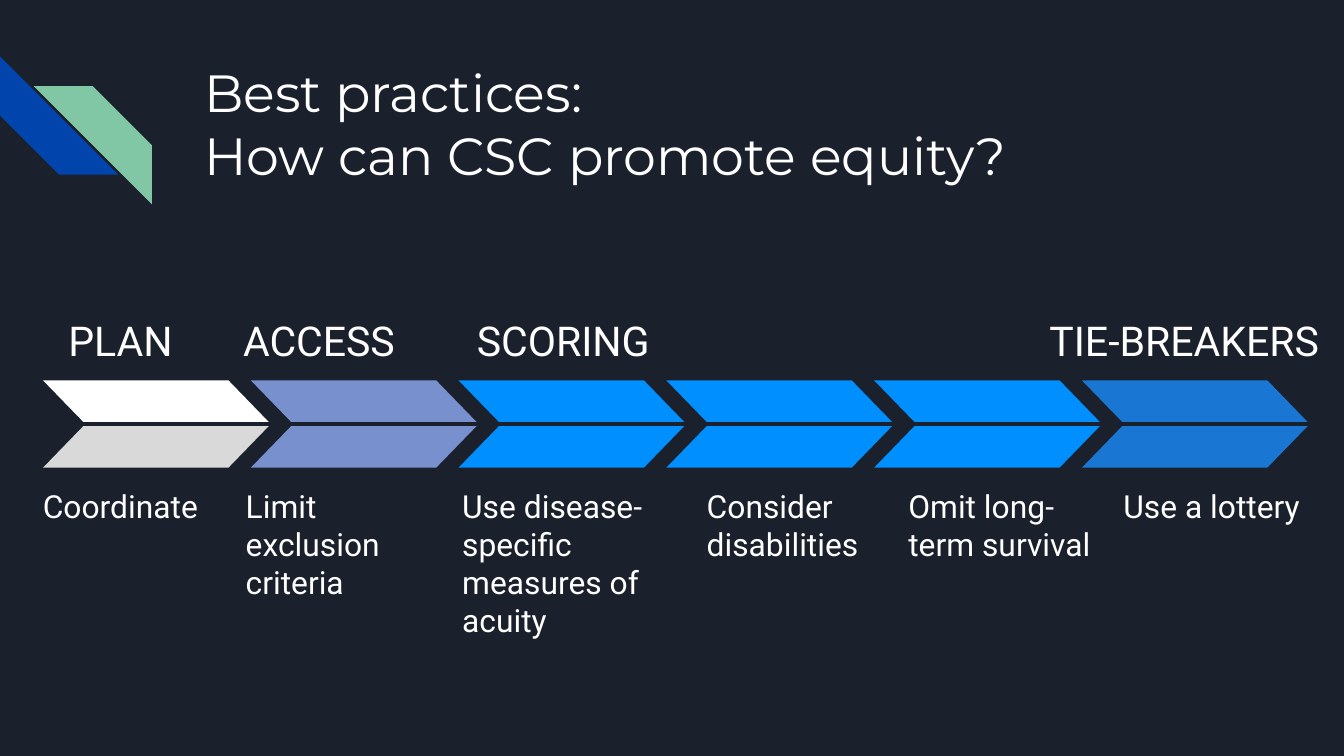
from pptx import Presentation
from pptx.dml.color import RGBColor
from pptx.enum.shapes import MSO_SHAPE
from pptx.enum.text import MSO_ANCHOR, MSO_AUTO_SIZE, PP_ALIGN
from pptx.oxml.ns import qn
from pptx.util import Inches, Pt

COLORS = {
    "background": "1B212C",
    "text": "FFFFFF",
    "blue_stripe": "0145AC",
    "green_stripe": "82C7A5",
    "plan_top": "FFFFFF",
    "plan_bottom": "D9D9D9",
    "access": "7890CD",
    "scoring": "008FFF",
    "tie_breakers": "1976D2",
}

CHEVRONS = [
    ("plan_top", "plan_bottom"),
    ("access", "access"),
    ("scoring", "scoring"),
    ("scoring", "scoring"),
    ("scoring", "scoring"),
    ("tie_breakers", "tie_breakers"),
]
FIRST_CHEVRON, LAST_CHEVRON = 0.32, 8.05

STAGES = [
    ("PLAN", 0.41, 1.04),
    ("ACCESS", 1.71, 1.51),
    ("SCORING", 3.45, 1.51),
    ("TIE-BREAKERS", 7.71, 2.25),
]

PRACTICES = [
    ("Coordinate", 0.22, 1.65),
    ("Limit exclusion criteria", 1.73, 1.61),
    ("Use disease- specific measures of acuity", 3.34, 1.82),
    ("Consider disabilities", 5.16, 1.61),
    ("Omit long-term survival", 6.66, 1.61),
    ("Use a lottery", 8.26, 1.61),
]


def rgb(name):
    return RGBColor.from_string(COLORS[name])


def write_lines(frame, lines, font_name, size):
    frame.word_wrap = True
    frame.auto_size = MSO_AUTO_SIZE.NONE
    frame.vertical_anchor = MSO_ANCHOR.TOP
    frame.margin_left = frame.margin_right = Inches(0.1)
    frame.margin_top = frame.margin_bottom = Inches(0.1)
    for index, line in enumerate(lines):
        paragraph = frame.add_paragraph() if index else frame.paragraphs[0]
        paragraph.alignment = PP_ALIGN.LEFT
        run = paragraph.add_run()
        run.text = line
        run.font.name = font_name
        run.font.size = Pt(size)
        run.font.color.rgb = rgb("text")


def set_title(slide, lines):
    title = slide.shapes.title
    title.left, title.top = Inches(1.42), Inches(0.35)
    title.width, title.height = Inches(7.7), Inches(1)
    write_lines(title.text_frame, lines, "Montserrat", 28)


def add_label(slide, text, left, top, width, height, size):
    label = slide.shapes.add_textbox(
        Inches(left), Inches(top), Inches(width), Inches(height)
    )
    write_lines(label.text_frame, [text], "Roboto", size)


def add_band(slide, kind, left, top, width, height, adjustment, color, flip=False):
    band = slide.shapes.add_shape(
        kind, Inches(left), Inches(top), Inches(width), Inches(height)
    )
    band.adjustments[0] = adjustment
    band.shadow.inherit = False
    band.fill.solid()
    band.fill.fore_color.rgb = rgb(color)
    band.line.fill.background()
    if flip:
        band._element.spPr.find(qn("a:xfrm")).set("flipH", "1")
    return band


def add_corner_stripes(slide):
    stripe = MSO_SHAPE.DIAGONAL_STRIPE
    blue = add_band(slide, stripe, 0, 0.42, 0.88, 0.88, 0.5, "blue_stripe")
    blue.rotation = 270
    add_band(slide, stripe, 0.25, 0.64, 0.88, 0.88, 0.5, "green_stripe", flip=True)


def add_chevron(slide, left, top_color, bottom_color):
    half = MSO_SHAPE.PARALLELOGRAM
    add_band(slide, half, left, 2.83, 1.68, 0.31, 0.97, top_color, flip=True)
    add_band(slide, half, left, 3.17, 1.68, 0.31, 0.97, bottom_color)


def main():
    """Build the slide on equity practices along the care process."""
    presentation = Presentation()
    presentation.slide_width = Inches(10)
    presentation.slide_height = Inches(10 * 9 / 16)
    slide = presentation.slides.add_slide(presentation.slide_layouts[5])
    slide.background.fill.solid()
    slide.background.fill.fore_color.rgb = rgb("background")

    add_corner_stripes(slide)
    set_title(slide, ["Best practices:", "How can CSC promote equity?"])
    for stage, left, width in STAGES:
        add_label(slide, stage, left, 2.25, width, 0.52, 22)
    for practice, left, width in PRACTICES:
        add_label(slide, practice, left, 3.52, width, 0.98, 17)
    step = (LAST_CHEVRON - FIRST_CHEVRON) / (len(CHEVRONS) - 1)
    for position, (top_color, bottom_color) in enumerate(CHEVRONS):
        add_chevron(slide, FIRST_CHEVRON + step * position, top_color, bottom_color)

    presentation.save("out.pptx")


if __name__ == "__main__":
    main()
